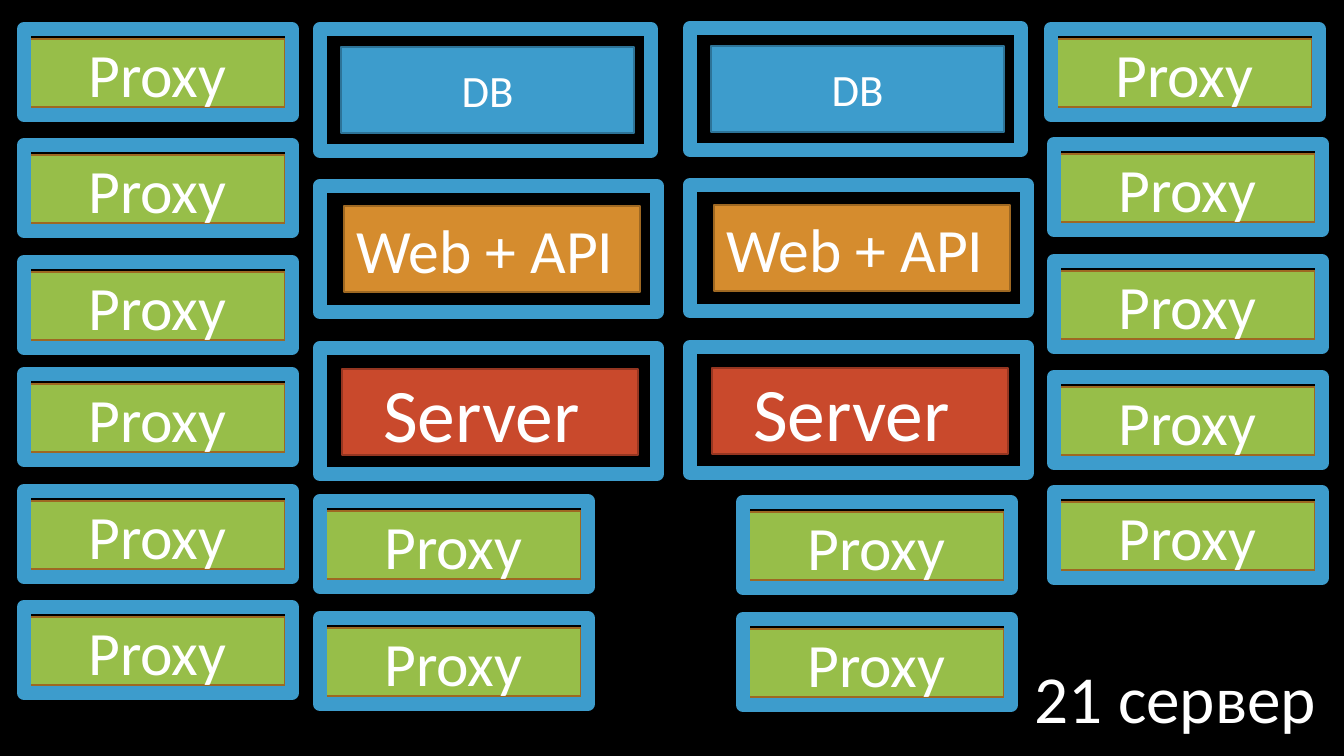
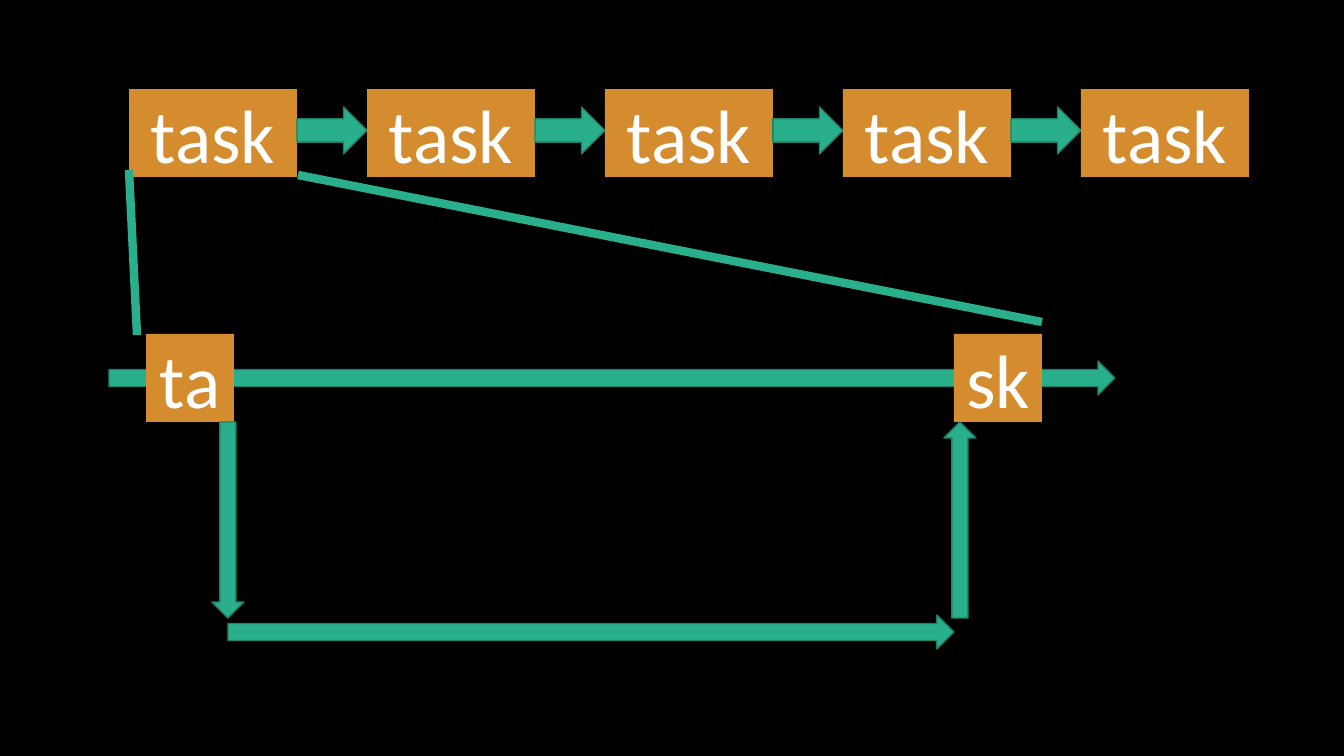
from lxml.etree import SubElement
from pptx import Presentation
from pptx.dml.color import RGBColor
from pptx.enum.shapes import MSO_CONNECTOR, MSO_SHAPE
from pptx.enum.text import MSO_ANCHOR, PP_ALIGN
from pptx.oxml.ns import qn
from pptx.util import Pt

SLIDE_WIDTH, SLIDE_HEIGHT = 1344, 756
EMU_PER_PX = 12192000 / SLIDE_WIDTH
FONT = "Calibri"
BLANK_LAYOUT = 6
COLORS = {
    "background": "000000",
    "text": "FFFFFF",
    "blue": "3D9CCC",
    "blue_edge": "2D7397",
    "orange": "D58C2E",
    "orange_edge": "9E6822",
    "red": "C9492C",
    "red_edge": "953621",
    "lime": "97BE49",
    "green": "29AF8C",
    "green_edge": "1E8168",
}


def px(length):
    return round(length * EMU_PER_PX)


def color(name):
    return RGBColor.from_string(COLORS[name])


class Deck:
    """The shared style and the slide being drawn; all lengths are in px."""

    def __init__(self):
        self.presentation = Presentation()
        self.presentation.slide_width = px(SLIDE_WIDTH)
        self.presentation.slide_height = px(SLIDE_HEIGHT)
        background = self.presentation.slide_master.background.fill
        background.solid()
        background.fore_color.rgb = color("background")
        self.slide = None

    def new_slide(self):
        layout = self.presentation.slide_layouts[BLANK_LAYOUT]
        self.slide = self.presentation.slides.add_slide(layout)

    def shape(self, kind, left, top, width, height, fill=None, edge=None, edge_width=1):
        shape = self.slide.shapes.add_shape(
            kind, px(left), px(top), px(width), px(height))
        shape.shadow.inherit = False
        if fill:
            shape.fill.solid()
            shape.fill.fore_color.rgb = color(fill)
        else:
            shape.fill.background()
        if edge:
            shape.line.color.rgb = color(edge)
            shape.line.width = Pt(edge_width)
        else:
            shape.line.fill.background()
        return shape

    def set_text(self, text_frame, text, size, alignment):
        text_frame.word_wrap = True
        paragraph = text_frame.paragraphs[0]
        paragraph.text = text
        paragraph.alignment = alignment
        paragraph.font.name = FONT
        paragraph.font.size = Pt(size)
        paragraph.font.color.rgb = color("text")

    def box(self, text, size, left, top, width, height, fill, edge=None):
        shape = self.shape(MSO_SHAPE.RECTANGLE, left, top, width, height, fill, edge)
        shape.text_frame.vertical_anchor = MSO_ANCHOR.MIDDLE
        self.set_text(shape.text_frame, text, size, PP_ALIGN.CENTER)

    def frame(self, left, top, width, height):
        self.shape(MSO_SHAPE.RECTANGLE, left, top, width, height,
                   edge="blue", edge_width=10)

    def proxy(self, left, top):
        """A framed proxy box, placed by the corner of its frame."""
        self.box("Proxy", 44, left + 6, top + 10, 255, 68, "lime", "orange_edge")
        self.frame(left, top, 268, 86)

    def arrow(self, kind, left, top, width, height):
        self.shape(kind, left, top, width, height, "green", "green_edge")

    def line(self, start, end):
        connector = self.slide.shapes.add_connector(
            MSO_CONNECTOR.STRAIGHT, *map(px, start + end))
        connector.line.color.rgb = color("green")
        connector.line.width = Pt(6)
        SubElement(connector._element.spPr, qn("a:effectLst"))

    def label(self, text, size, left, top, width, height):
        label = self.slide.shapes.add_textbox(
            px(left), px(top), px(width), px(height))
        self.set_text(label.text_frame, text, size, PP_ALIGN.LEFT)


def add_server_slide(deck):
    deck.new_slide()
    # text, size, colour, frame top, frame size, box offset, box width
    tiers = [
        ("DB", 32, "blue", 29, (331, 122), (21, 18), 293),
        ("Web + API ", 44, "orange", 186, (337, 126), (24, 20), 296),
        ("Server ", 54, "red", 348, (337, 126), (22, 21), 296),
    ]
    for left, rise in ((320, 0), (690, 1)):
        for text, size, fill, top, frame_size, (dx, dy), width in tiers:
            deck.box(text, size, left + dx, top - rise + dy, width, 86,
                     fill, f"{fill}_edge")
            deck.frame(left, top - rise, *frame_size)

    proxy_columns = [
        (24, (29, 145, 262, 374, 491, 607)),
        (320, (501, 618)),
        (743, (502, 619)),
        (1051, (29,)),
        (1054, (144, 261, 377, 492)),
    ]
    for left, tops in proxy_columns:
        for top in tops:
            deck.proxy(left, top)
    deck.label("21 сервер", 48, 1025, 651, 319, 92)


def add_task_slide(deck):
    deck.new_slide()
    task_count, first_left, task_width, gap = 5, 129, 168, 70
    for index in range(task_count):
        left = first_left + index * (task_width + gap)
        deck.box("task", 54, left, 89, task_width, 88, "orange")
        if index < task_count - 1:
            deck.arrow(MSO_SHAPE.RIGHT_ARROW, left + task_width, 107, gap, 47)

    deck.arrow(MSO_SHAPE.RIGHT_ARROW, 109, 361, 1006, 34)
    for text, left in (("ta", 146), ("sk", 954)):
        deck.box(text, 54, left, 334, 88, 88, "orange")
    deck.arrow(MSO_SHAPE.DOWN_ARROW, 212, 422, 32, 196)
    deck.arrow(MSO_SHAPE.RIGHT_ARROW, 228, 615, 726, 34)
    deck.arrow(MSO_SHAPE.UP_ARROW, 944, 422, 32, 196)

    deck.line((129, 170), (137, 335))
    deck.line((298, 175), (1042, 322))


def main():
    deck = Deck()
    add_server_slide(deck)
    add_task_slide(deck)
    deck.presentation.save("out.pptx")


if __name__ == "__main__":
    main()
